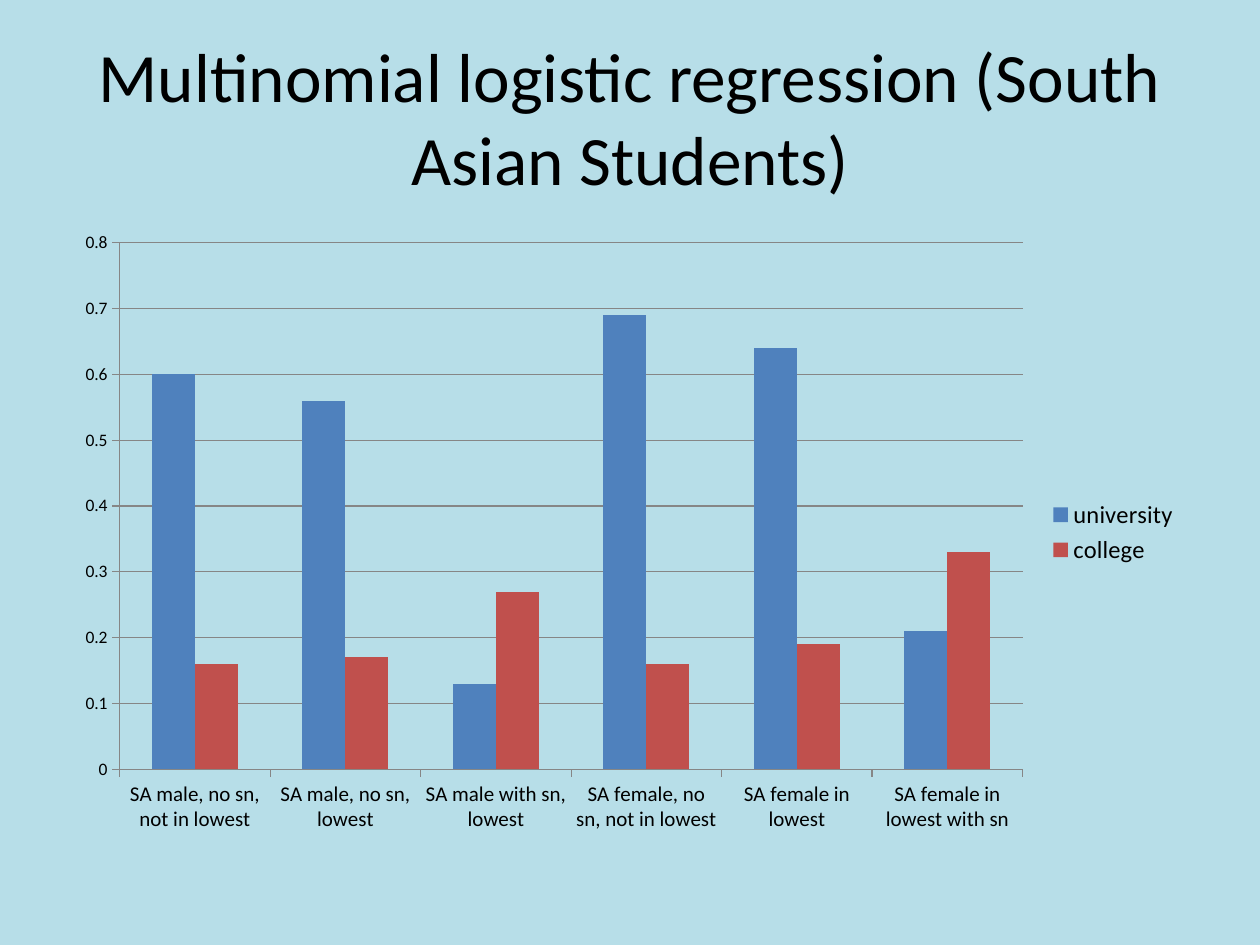
from pptx import Presentation
from pptx.chart.data import CategoryChartData as Data
from pptx.dml.color import RGBColor as RGB
from pptx.enum.chart import XL_CHART_TYPE as Kind, XL_LEGEND_POSITION as Side, XL_TICK_MARK as Tick
from pptx.enum.text import MSO_ANCHOR as Anchor, PP_ALIGN as Align
from pptx.util import Inches, Pt

HUES = {"back": "B7DEE8", "text": "000000", "line": "868686",
        "university ": "4F81BD", "college": "C0504D"}
CATS = ["SA male, no sn, not in lowest", "SA male, no sn, lowest",
        "SA male with sn, lowest", "SA female, no sn, not in lowest",
        "SA female in lowest", "SA female in lowest with sn"]
RATES = {"university ": [0.6, 0.56, 0.13, 0.69, 0.64, 0.21],
         "college": [0.16, 0.17, 0.27, 0.16, 0.19, 0.33]}


def hue(name):
    return RGB.from_string(HUES[name])


def put(item, **vals):
    for key, val in vals.items():
        setattr(item, key, val)


def paint(fill, name):
    fill.solid()
    fill.fore_color.rgb = hue(name)


def style(font, size):
    put(font, name="Calibri", size=Pt(size), bold=False)
    font.color.rgb = hue("text")


def rule(line):
    line.color.rgb = hue("line")
    line.width = Pt(0.75)


def add_title(slide, text):
    box = slide.shapes.add_textbox(Inches(0.5), Inches(0.3), Inches(9), Inches(1.25))
    frame = box.text_frame
    put(frame, word_wrap=True, vertical_anchor=Anchor.MIDDLE)
    para = frame.paragraphs[0]
    para.alignment = Align.CENTER
    run = para.add_run()
    run.text = text
    style(run.font, 39.6)


def set_axis(axis, size):
    put(axis, major_tick_mark=Tick.OUTSIDE, minor_tick_mark=Tick.NONE)
    style(axis.tick_labels.font, size)
    rule(axis.format.line)


def add_bars(slide):
    data = Data()
    data.categories = CATS
    for name, vals in RATES.items():
        data.add_series(name, vals)
    chart = slide.shapes.add_chart(Kind.COLUMN_CLUSTERED, Inches(0.5), Inches(1.75),
                                   Inches(9), Inches(4.95), data).chart
    put(chart, has_title=False, has_legend=True)
    style(chart.font, 10)
    put(chart.legend, position=Side.RIGHT, include_in_layout=False)
    style(chart.legend.font, 14)
    set_axis(chart.category_axis, 12)
    scale = chart.value_axis
    set_axis(scale, 10)
    put(scale, minimum_scale=0, maximum_scale=0.8, major_unit=0.1, has_major_gridlines=True)
    rule(scale.major_gridlines.format.line)
    plot = chart.plots[0]
    put(plot, gap_width=150, overlap=0, vary_by_categories=False)
    for bar in plot.series:
        bar.invert_if_negative = False
        paint(bar.format.fill, bar.name)


def main():
    deck = Presentation()
    put(deck, slide_width=Inches(10), slide_height=Inches(7.5))
    slide = deck.slides.add_slide(deck.slide_layouts[6])
    paint(slide.background.fill, "back")
    add_title(slide, "Multinomial logistic regression (South Asian Students)")
    add_bars(slide)
    deck.save("out.pptx")


if __name__ == "__main__":
    main()
